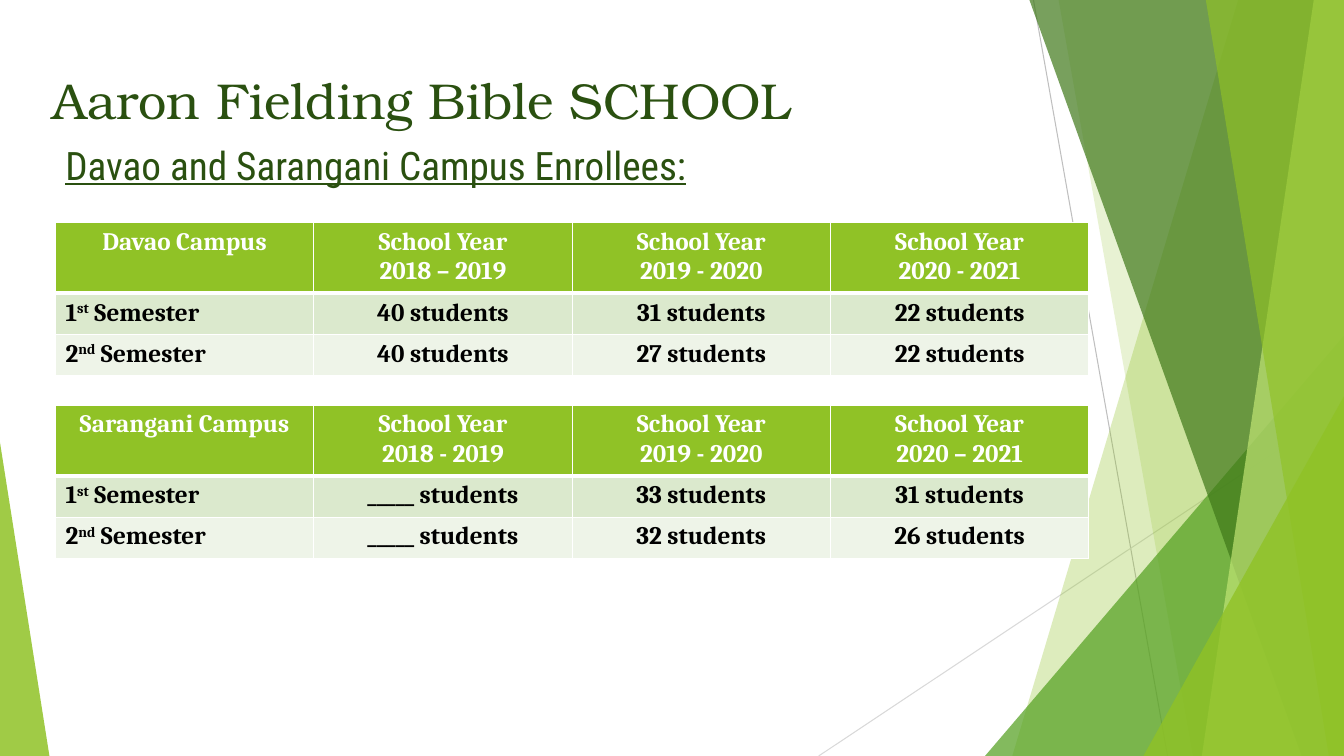
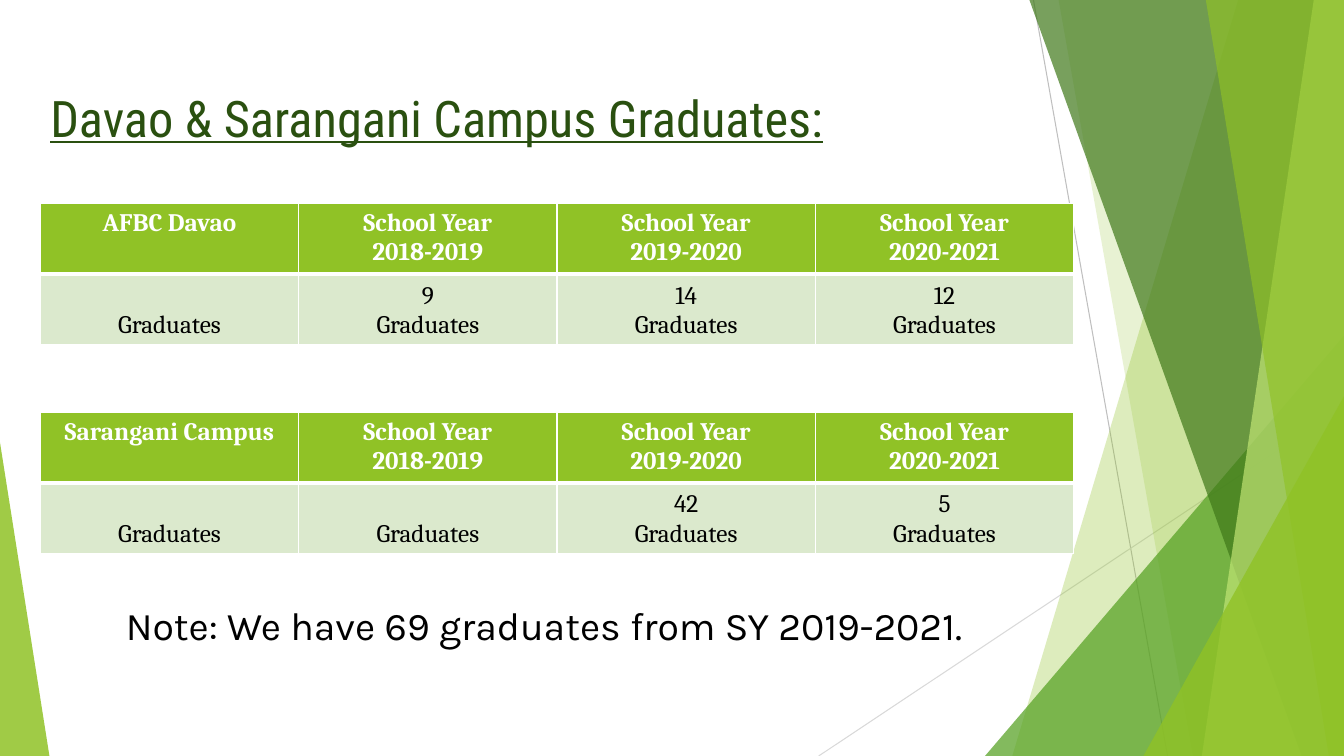
"""Build the two slides on Bible school enrollees and graduates."""
import lxml.etree
import pptx
import pptx.dml.color
import pptx.enum.shapes
import pptx.enum.text
import pptx.oxml.ns
import pptx.util

Inches = pptx.util.Inches
qn = pptx.oxml.ns.qn
Align = pptx.enum.text.PP_ALIGN
Anchor = pptx.enum.text.MSO_ANCHOR
Kind = pptx.enum.shapes.MSO_SHAPE


class Theme:
    width, height = 13.33, 7.5
    white, black, title = "FFFFFF", "000000", "2A5010"
    lime, green, forest, pale = "90C226", "54A021", "3F7819", "C0E474"
    bands = ["DBE9CD", "EEF4E8"]
    light_line, lighter_line = "BFBFBF", "D9D9D9"
    serif, heading, condensed, note = "Cambria", "TeX Gyre Bonum", "Roboto Condensed", "Karla"
    title_size, subtitle_size, table_size = 36, 28, 18
    table_width, header_height = 10.25, 0.66
    thin, thick = 1, 3


def rgb(code):
    return pptx.dml.color.RGBColor.from_string(code)


def write(frame, text, size=Theme.table_size, font=Theme.serif, color=Theme.black,
          bold=False, underline=False, align=Align.LEFT, anchor=Anchor.TOP):
    """Fill a text frame; newlines part paragraphs and ^marks^ raise text."""
    frame.word_wrap = True
    frame.vertical_anchor = anchor
    for index, line in enumerate(text.split("\n")):
        para = frame.paragraphs[0] if index == 0 else frame.add_paragraph()
        para.alignment = align
        for position, part in enumerate(line.split("^")):
            span = para.add_run()
            span.text = part
            span.font.size = pptx.util.Pt(size)
            span.font.name = font
            span.font.bold = bold
            span.font.underline = underline
            span.font.color.rgb = rgb(color)
            if position % 2:
                span.font._element.set("baseline", "30000")


hairlines = [
    (10.25, 0, 11.58, 7.5, Theme.light_line),
    (13.33, 4.03, 8.12, 7.5, Theme.lighter_line),
]
facets = [
    ("strip", (12.28, 10.04), Theme.lime, 30),
    ("strip", (10.5, 11.83), Theme.lime, 20),
    ("triangle", (9.77, 3.33, 3.56, 1), Theme.green, 72),
    ("strip", (10.21, 12.91), Theme.forest, 70),
    ("strip", (13.03, 11.92), Theme.pale, 70),
    ("strip", (11.96, 13.18), Theme.lime, 65),
    ("triangle", (11.34, 3.93, 1.99, 1), Theme.lime, 80),
    ("triangle", (0, 4.39, 0.49, 0), Theme.lime, 85),
]

heading = dict(color=Theme.title, size=Theme.title_size)
enrollees = dict(left=0.55, row_height=0.41, bold=True,
                 first_align=Align.LEFT, anchor=Anchor.TOP)
graduates = dict(left=0.4, row_height=0.66, bold=False,
                 first_align=Align.CENTER, anchor=Anchor.BOTTOM)
graduate_years = ["School Year\n2018-2019", "School Year\n2019-2020", "School Year\n2020-2021"]

pages = [
    dict(
        texts=[
            ((0.42, 0.64, 9.75, 1.4), "Aaron Fielding Bible SCHOOL",
             dict(heading, font=Theme.heading)),
            ((0.55, 1.34, 6.55, 0.58), "Davao and Sarangani Campus Enrollees:",
             dict(heading, size=Theme.subtitle_size, font=Theme.condensed,
                  underline=True, anchor=Anchor.MIDDLE)),
        ],
        layout=enrollees,
        tables=[
            (2.21, [
                ["Davao Campus", "School Year\n2018 – 2019",
                 "School Year\n2019 - 2020", "School Year\n2020 - 2021"],
                ["1^st^ Semester", "40 students", "31 students", "22 students"],
                ["2^nd^ Semester", "40 students", "27 students", "22 students"],
            ]),
            (4.02, [
                ["Sarangani Campus", "School Year\n2018 - 2019",
                 "School Year\n2019 - 2020", "School Year\n2020 – 2021"],
                ["1^st^ Semester", "_____ students", "33 students", "31 students"],
                ["2^nd^ Semester", "_____ students", "32 students", "26 students"],
            ]),
        ],
    ),
    dict(
        texts=[
            ((0.4, 0.41, 10.25, 1.5), "Davao & Sarangani Campus Graduates:",
             dict(heading, font=Theme.condensed, underline=True, anchor=Anchor.MIDDLE)),
            ((0.18, 5.92, 10.43, 0.57), "Note: We have 69 graduates from SY 2019-2021.",
             dict(size=Theme.subtitle_size, font=Theme.note, align=Align.CENTER)),
        ],
        layout=graduates,
        tables=[
            (2.02, [
                ["AFBC Davao", *graduate_years],
                ["Graduates", "9\nGraduates", "14\nGraduates", "12\nGraduates"],
            ]),
            (4.09, [
                ["Sarangani Campus", *graduate_years],
                ["Graduates", "Graduates", "42\nGraduates", "5\nGraduates"],
            ]),
        ],
    ),
]

deck = pptx.Presentation()
deck.slide_width = Inches(Theme.width)
deck.slide_height = Inches(Theme.height)

for page in pages:
    slide = deck.slides.add_slide(deck.slide_layouts[6])

    for x1, y1, x2, y2, color in hairlines:
        hairline = slide.shapes.add_connector(
            pptx.enum.shapes.MSO_CONNECTOR.STRAIGHT,
            Inches(x1), Inches(y1), Inches(x2), Inches(y2))
        hairline.line.color.rgb = rgb(color)
        hairline.line.width = pptx.util.Pt(0.75)
        lxml.etree.SubElement(hairline._element.spPr, qn("a:effectLst"))

    for kind, geometry, color, opacity in facets:
        if kind == "strip":
            top_x, bottom_x = geometry
            builder = slide.shapes.build_freeform(Inches(top_x), 0)
            corners = [(Theme.width, 0), (Theme.width, Theme.height), (bottom_x, Theme.height)]
            builder.add_line_segments([(Inches(x), Inches(y)) for x, y in corners], close=True)
            facet = builder.convert_to_shape()
        else:
            left, top, width, apex = geometry
            facet = slide.shapes.add_shape(
                Kind.ISOSCELES_TRIANGLE, Inches(left), Inches(top),
                Inches(width), Inches(Theme.height - top))
            facet.adjustments[0] = apex
        facet.shadow.inherit = False
        facet.line.fill.background()
        facet.fill.solid()
        facet.fill.fore_color.rgb = rgb(color)
        tint = facet._element.spPr.find(".//" + qn("a:srgbClr"))
        lxml.etree.SubElement(tint, qn("a:alpha"), val=str(opacity * 1000))

    for area, text, style in page["texts"]:
        box = slide.shapes.add_textbox(*[Inches(length) for length in area])
        write(box.text_frame, text, **style)

    layout = page["layout"]
    for top, rows in page["tables"]:
        height = Theme.header_height + layout["row_height"] * (len(rows) - 1)
        table = slide.shapes.add_table(
            len(rows), len(rows[0]), Inches(layout["left"]), Inches(top),
            Inches(Theme.table_width), Inches(height)).table
        for row_index, row in enumerate(rows):
            header = row_index == 0
            table.rows[row_index].height = Inches(
                Theme.header_height if header else layout["row_height"])
            edges = {
                "a:lnL": Theme.thin,
                "a:lnR": Theme.thin,
                "a:lnT": Theme.thin,
                "a:lnB": Theme.thick if header else Theme.thin,
            }
            for column_index, text in enumerate(row):
                cell = table.cell(row_index, column_index)
                body_align = layout["first_align"] if column_index == 0 else Align.CENTER
                write(cell.text_frame, text,
                      color=Theme.white if header else Theme.black,
                      bold=header or layout["bold"],
                      align=Align.CENTER if header else body_align)
                cell.vertical_anchor = Anchor.TOP if header else layout["anchor"]
                properties = cell._tc.get_or_add_tcPr()
                for edge, weight in edges.items():
                    border = lxml.etree.SubElement(
                        properties, qn(edge), w=str(pptx.util.Pt(weight)))
                    paint = lxml.etree.SubElement(border, qn("a:solidFill"))
                    lxml.etree.SubElement(paint, qn("a:srgbClr"), val=Theme.white)
                cell.fill.solid()
                cell.fill.fore_color.rgb = rgb(
                    Theme.lime if header else Theme.bands[(row_index - 1) % 2])

deck.save("out.pptx")
